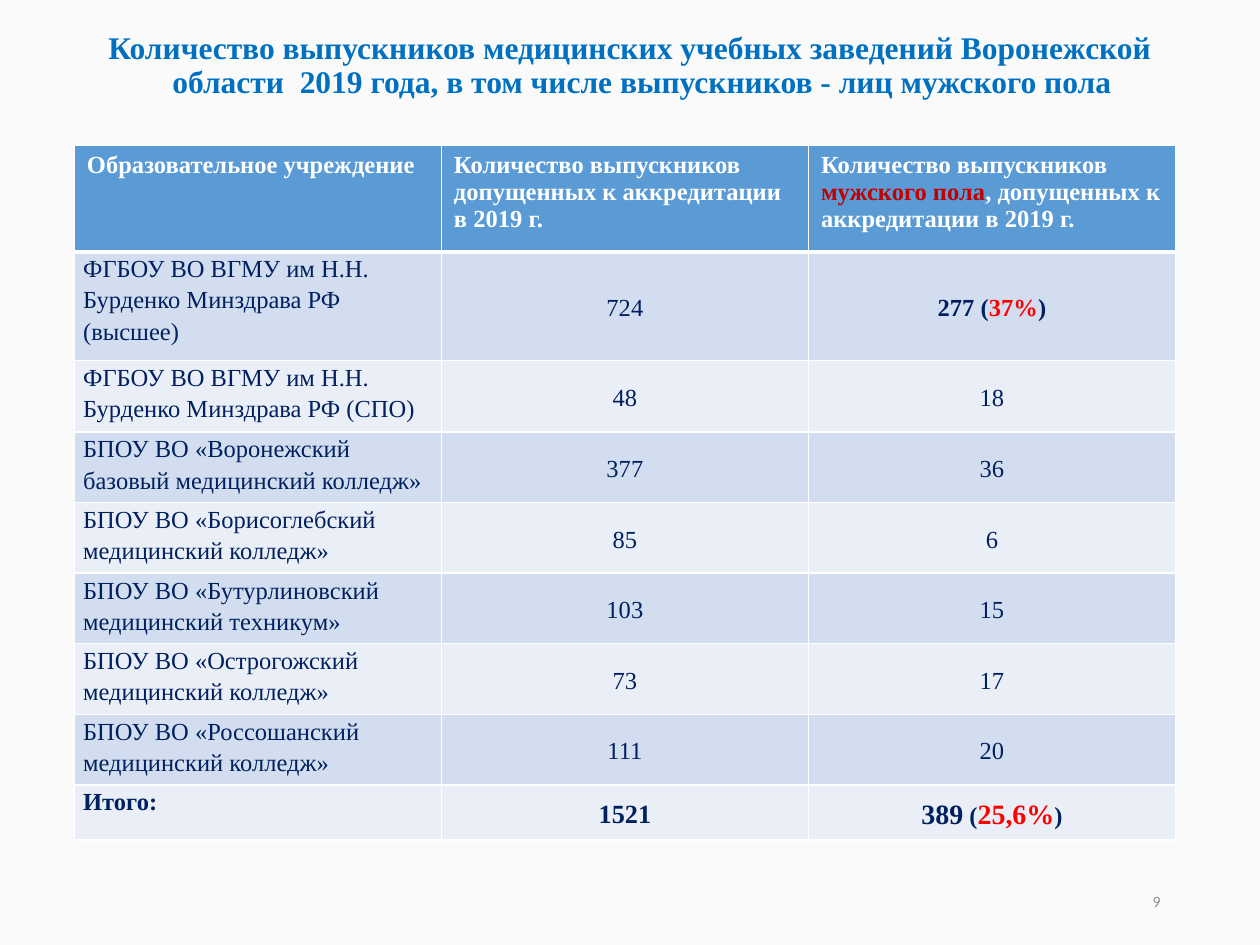
from lxml import etree
from pptx import Presentation
from pptx import util as u
from pptx.dml.color import RGBColor
from pptx.enum import text
from pptx.oxml.ns import qn

hues = {
    "back": "FAFAFA", "title": "0070C0", "head": "5B9BD5", "odd": "D2DEEF",
    "even": "EAEFF7", "white": "FFFFFF", "navy": "002060", "dark": "C00000",
    "red": "FF0000", "gray": "8C8C8C",
}
mid = text.MSO_ANCHOR.MIDDLE
top = text.MSO_ANCHOR.TOP
side = text.PP_ALIGN


def write(par, runs, size, hue, bold=False, face="Times New Roman"):
    for part in runs:
        words, look = part if isinstance(part, tuple) else (part, {})
        run = par.add_run()
        run.text = words
        form = {"name": face, "size": u.Pt(look.get("size", size)),
                "bold": look.get("bold", bold)}
        for key, val in form.items():
            setattr(run.font, key, val)
        run.font.color.rgb = RGBColor.from_string(hues[look.get("hue", hue)])


def edge(cell, tag, wide):
    line = etree.SubElement(cell._tc.get_or_add_tcPr(), qn("a:" + tag), w=str(u.Pt(wide)))
    fill = etree.SubElement(line, qn("a:solidFill"))
    etree.SubElement(fill, qn("a:srgbClr"), val=hues["white"])


prs = Presentation()
prs.slide_width = u.Inches(10)
prs.slide_height = u.Inches(7.5)
slide = prs.slides.add_slide(prs.slide_layouts[6])
slide.background.fill.solid()
slide.background.fill.fore_color.rgb = RGBColor.from_string(hues["back"])

title = ("Количество выпускников медицинских учебных заведений Воронежской "
         "области  2019 года, в том числе выпускников - лиц мужского пола")
boxes = [
    ((0.69, 0.21, 8.62, 0.75), title, top, side.CENTER, 0.9, 0.19,
     {"size": 18, "hue": "title", "bold": True}),
    ((7.06, 6.95, 2.25, 0.4), "9", mid, side.RIGHT, 1.0, 0,
     {"size": 9, "hue": "gray", "face": "Calibri"}),
]
for place, words, anchor, align, gap, hang, look in boxes:
    frame = slide.shapes.add_textbox(*map(u.Inches, place)).text_frame
    frame.word_wrap = True
    frame.vertical_anchor = anchor
    par = frame.paragraphs[0]
    par.alignment = align
    par.line_spacing = gap
    if hang:
        props = par._p.get_or_add_pPr()
        props.set("marL", str(u.Inches(hang)))
        props.set("indent", str(-u.Inches(hang)))
    write(par, [words], **look)

heads = [
    ["Образовательное учреждение"],
    ["Количество выпускников допущенных к аккредитации в 2019 г."],
    ["Количество выпускников ", ("мужского пола", {"hue": "dark"}),
     ", допущенных к аккредитации в 2019 г."],
]
bold = {"bold": True}
rows = [
    heads,
    [["ФГБОУ ВО ВГМУ им Н.Н. Бурденко Минздрава РФ (высшее)"], ["724"],
     [("277 (", bold), ("37%", {"bold": True, "hue": "red"}), (")", bold)]],
    [["ФГБОУ ВО ВГМУ им Н.Н. Бурденко Минздрава РФ (СПО)"], ["48"], ["18"]],
    [["БПОУ ВО «Воронежский базовый медицинский колледж»"], ["377"], ["36"]],
    [["БПОУ ВО «Борисоглебский медицинский колледж»"], ["85"], ["6"]],
    [["БПОУ ВО «Бутурлиновский медицинский техникум»"], ["103"], ["15"]],
    [["БПОУ ВО «Острогожский медицинский колледж»"], ["73"], ["17"]],
    [["БПОУ ВО «Россошанский медицинский колледж»"], ["111"], ["20"]],
    [["Итого:"], [("1521", {"size": 15})],
     [("389", {"size": 16}), " (", ("25,6%", {"size": 16, "hue": "red"}), ")"]],
]
highs = [0.85, 0.86, 0.57] + [0.56] * 5 + [0.44]
place = (0.59, 1.15, 8.74, sum(highs))
table = slide.shapes.add_table(len(rows), 3, *map(u.Inches, place)).table
for col in table.columns:
    col.width = u.Inches(8.74 / 3)

for r, row in enumerate(rows):
    table.rows[r].height = u.Inches(highs[r])
    first, last = r == 0, r == len(rows) - 1
    for c, runs in enumerate(row):
        cell = table.cell(r, c)
        edges = {"lnL": 1, "lnR": 1, "lnT": 3 if r == 1 else 1, "lnB": 3 if first else 1}
        for tag, wide in edges.items():
            edge(cell, tag, wide)
        cell.fill.solid()
        shade = "head" if first else "odd" if r % 2 else "even"
        cell.fill.fore_color.rgb = RGBColor.from_string(hues[shade])
        par = cell.text_frame.paragraphs[0]
        if not first:
            form = {"margin_left": 0.07, "margin_right": 0.07,
                    "margin_top": 0, "margin_bottom": 0}
            for key, val in form.items():
                setattr(cell, key, u.Inches(val))
            par.line_spacing = 1.15
            if c:
                cell.vertical_anchor = mid
                par.alignment = side.CENTER
        write(par, runs, 14, "white" if first else "navy", first or last)

prs.save("out.pptx")
